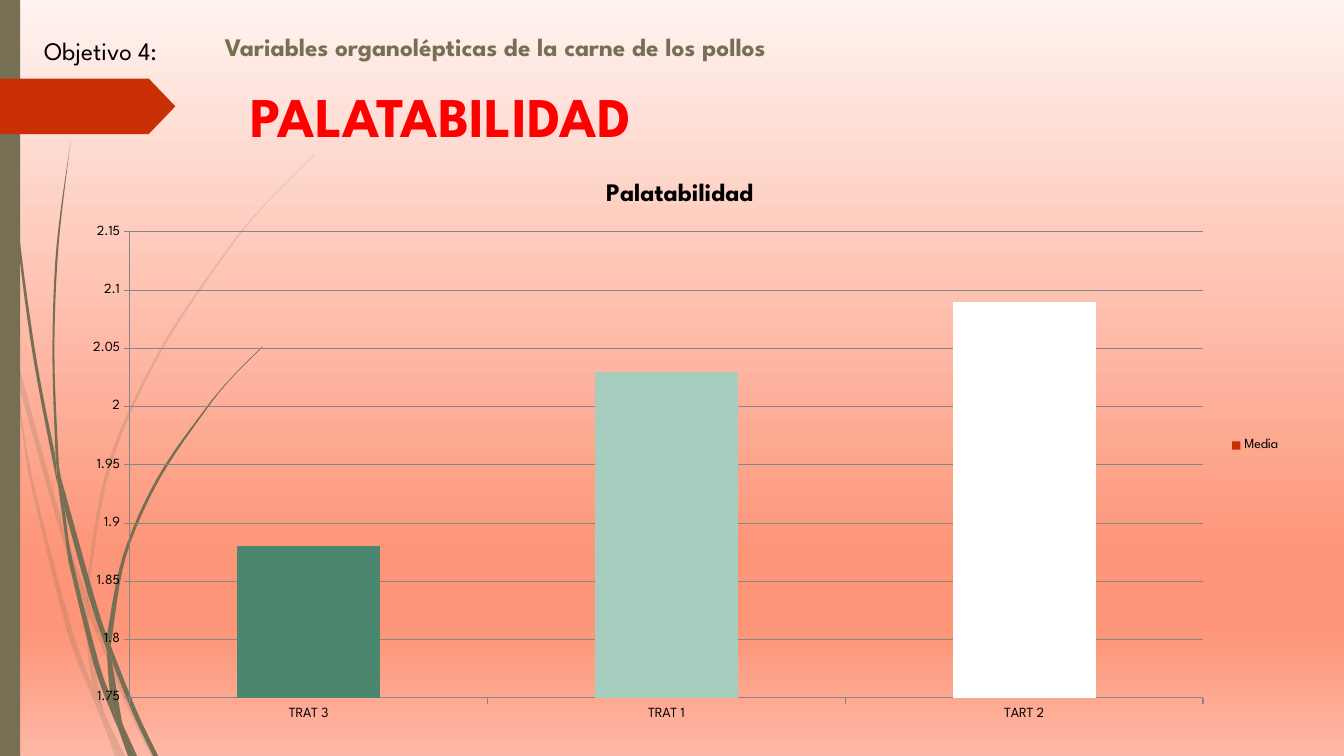
from dataclasses import dataclass
from typing import Any, NamedTuple

from lxml.etree import SubElement
from pptx import Presentation
from pptx.chart.data import CategoryChartData
from pptx.dml.color import RGBColor
from pptx.enum.chart import XL_CHART_TYPE, XL_LEGEND_POSITION, XL_TICK_MARK
from pptx.enum.shapes import MSO_SHAPE
from pptx.enum.text import MSO_ANCHOR
from pptx.oxml.ns import qn
from pptx.util import Cm, Pt

Point = tuple[float, float]
GRID = Cm(2.54)
CURVE_STEPS = 6


@dataclass(frozen=True)
class Theme:
    font: str = "League Spartan"
    olive: str = "766F54"
    rust: str = "CA2F03"
    red: str = "FF0000"
    black: str = "000000"
    rule: str = "868686"
    bars: tuple[str, ...] = ("4B866E", "A6CDBD", "FFFFFF")
    sky: tuple[tuple[int, str], ...] = (
        (0, "FFF3F0"), (74, "FD9578"), (83, "FD9578"), (100, "FEB8A5"))
    faded: int = 20
    heading: int = 40
    body: int = 18
    chart: int = 10


class Blade(NamedTuple):
    outward: list[Point]
    back: list[Point]


class Caption(NamedTuple):
    wording: str
    left: float
    top: float
    width: float
    height: float
    size: int
    color: str
    bold: bool


THEME = Theme()

FADED_BLADES = [
    Blade([(.11, 3.5), (.09, 3.22), (0, 2.82)], [(0, 2.99), (.1, 3.44)]),
    Blade([(.14, 3.45), (.62, 5.2), (.85, 5.86)],
          [(.84, 5.99), (.58, 5.22), (.17, 3.76)]),
    Blade([(.88, 5.96), (.92, 6.07), (1.27, 6.92), (1.55, 7.5)],
          [(1.5, 7.5), (1.23, 6.94), (.88, 6.1)]),
    Blade([(1.05, 7.11), (1.24, 7.5)], [(1.19, 7.5)]),
    Blade([(.11, 3.5), (.17, 3.76), (.31, 4.69), (.7, 6.19), (.93, 6.83)],
          [(.99, 7.07), (1.01, 7.14), (.92, 6.93), (.65, 6.21), (.28, 4.7)]),
    Blade([(.84, 5.99), (.87, 6.46), (.93, 6.83), (1.05, 7.11)],
          [(1.03, 7.06), (.91, 6.46), (.88, 6.1)]),
    Blade([(.88, 5.96), (.88, 5.84), (1.1, 4.62), (1.6, 3.49), (2.29, 2.45),
           (2.68, 1.98), (3.12, 1.54)],
          [(3.12, 1.53), (2.68, 1.97), (2.28, 2.44), (1.58, 3.48), (1.07, 4.61),
           (.85, 5.84)]),
    Blade([(1.01, 7.14), (1.14, 7.5)], [(1.19, 7.5)]),
    Blade([(.85, 5.86), (.88, 5.96), (.88, 6.1)], [(.84, 5.99)]),
    Blade([(.93, 6.83), (1.05, 7.11), (1.19, 7.5)], [(1.01, 7.14)]),
]

SOLID_BLADES = [
    Blade([(.03, 0), (.04, .48), (.07, 1.1), (.17, 2.33), (.33, 3.55), (.57, 4.81)],
          [(.55, 4.53), (.36, 3.55), (.19, 2.32), (.08, 1.09), (.04, 0)]),
    Blade([(.6, 4.72), (.93, 5.9), (1.06, 6.31)],
          [(1.06, 6.45), (.88, 5.92), (.64, 5.05)]),
    Blade([(1.1, 6.41), (1.36, 7.06), (1.57, 7.5)],
          [(1.52, 7.5), (1.32, 7.08), (1.11, 6.56)]),
    Blade([(.57, 4.77), (.64, 5.05), (.72, 5.56), (.98, 6.57), (1.1, 6.91)],
          [(1.17, 7.22), (1.11, 7.08), (.93, 6.59), (.68, 5.57)]),
    Blade([(.6, 4.72), (.58, 4.53), (.54, 3.49), (.58, 2.45), (.7, 1.41)],
          [(.7, 1.41), (.56, 2.45), (.52, 3.49), (.55, 4.49)]),
    Blade([(1.22, 7.19), (1.36, 7.5)], [(1.33, 7.5)]),
    Blade([(.55, 4.49), (.6, 4.72), (.64, 5.05)], [(.57, 4.77)]),
    Blade([(1.1, 6.41), (1.11, 6.33), (1.25, 5.52), (1.58, 4.76), (2.05, 4.06),
           (2.31, 3.74), (2.61, 3.44)],
          [(2.6, 3.44), (2.31, 3.73), (2.04, 4.05), (1.56, 4.74), (1.22, 5.51),
           (1.06, 6.31)]),
    Blade([(1.17, 7.22), (1.31, 7.5)], [(1.27, 7.5)]),
    Blade([(1.06, 6.45), (1.1, 6.91), (1.22, 7.19)], [(1.21, 7.16), (1.11, 6.56)]),
    Blade([(1.06, 6.31), (1.1, 6.41), (1.11, 6.56)], [(1.06, 6.45)]),
    Blade([(1.1, 6.91), (1.22, 7.19), (1.33, 7.5)], [(1.3, 7.5), (1.17, 7.22)]),
]

CAPTIONS = [
    Caption("Variables organolépticas de la carne de los pollos",
            5.41, .58, 27.2, 1.19, THEME.body, THEME.olive, True),
    Caption("Objetivo 4:", .86, .76, 6.38, 1.02, THEME.body, THEME.black, False),
    Caption("PALATABILIDAD", 6.07, 1.78, 25.37, 2.24, THEME.heading, THEME.red, True),
]


def apply(target: Any, values: dict[str, Any]) -> None:
    for name, value in values.items():
        setattr(target, name, value)


def style_font(font: Any, size: int, color: str, bold: bool) -> None:
    apply(font, {"name": THEME.font, "size": Pt(size), "bold": bold})
    font.color.rgb = RGBColor.from_string(color)


def paint(shape: Any, color: str) -> None:
    shape.shadow.inherit = False
    shape.fill.solid()
    shape.fill.fore_color.rgb = RGBColor.from_string(color)
    shape.line.fill.background()


def smooth(edge: list[Point]) -> list[Point]:
    padded = [edge[0], *edge, edge[-1]]
    curve = [edge[0]]
    for before, start, end, after in zip(padded, padded[1:], padded[2:], padded[3:]):
        for step in range(1, CURVE_STEPS + 1):
            t = step / CURVE_STEPS
            x, y = (
                b + ((c - a) * t + (2 * a - 5 * b + 4 * c - d) * t ** 2
                     + (3 * b - a - 3 * c + d) * t ** 3) / 2
                for a, b, c, d in zip(before, start, end, after))
            curve.append((x, y))
    return curve


def draw_blade(slide: Any, blade: Blade, opacity: int) -> None:
    outline = [(x * GRID, y * GRID) for x, y in smooth(blade.outward) + smooth(blade.back)]
    builder = slide.shapes.build_freeform(*outline[0])
    builder.add_line_segments(outline[1:], close=True)
    leaf = builder.convert_to_shape()
    paint(leaf, THEME.olive)
    if opacity < 100:
        tint = leaf.element.spPr.find(f"{qn('a:solidFill')}/{qn('a:srgbClr')}")
        SubElement(tint, qn("a:alpha"), val=str(opacity * 1000))


def draw_background(slide: Any) -> None:
    fill = slide.background.fill
    fill.gradient()
    fill.gradient_angle = 270
    stops = slide.element.find(f".//{qn('a:gsLst')}")
    stops.clear()
    for position, color in THEME.sky:
        stop = SubElement(stops, qn("a:gs"), pos=str(position * 1000))
        SubElement(stop, qn("a:srgbClr"), val=color)


def draw_caption(slide: Any, caption: Caption) -> None:
    box = slide.shapes.add_textbox(
        Cm(caption.left), Cm(caption.top), Cm(caption.width), Cm(caption.height))
    apply(box.text_frame, {"word_wrap": True, "vertical_anchor": MSO_ANCHOR.MIDDLE})
    run = box.text_frame.paragraphs[0].add_run()
    run.text = caption.wording
    style_font(run.font, caption.size, caption.color, caption.bold)


def draw_palatability(slide: Any) -> None:
    data = CategoryChartData()
    data.categories = ["TRAT 3", "TRAT 1", "TART 2"]
    data.add_series("Media", [1.88, 2.03, 2.09])
    chart = slide.shapes.add_chart(
        XL_CHART_TYPE.COLUMN_CLUSTERED, Cm(1.73), Cm(4.01), Cm(30.81), Cm(14.43), data).chart
    style_font(chart.font, THEME.chart, THEME.black, False)
    apply(chart, {"has_legend": True, "has_title": True})
    apply(chart.legend, {"position": XL_LEGEND_POSITION.RIGHT, "include_in_layout": False})
    heading = chart.chart_title.text_frame
    heading.text = "Palatabilidad"
    style_font(heading.paragraphs[0].runs[0].font, THEME.body, THEME.black, True)
    scale = chart.value_axis
    apply(scale, {"minimum_scale": 1.75, "maximum_scale": 2.15, "major_unit": .05,
                  "has_major_gridlines": True})
    apply(scale.tick_labels, {"number_format": "General", "number_format_is_linked": False})
    for axis in (scale, chart.category_axis):
        axis.major_tick_mark = XL_TICK_MARK.OUTSIDE
    for ruled in (scale, chart.category_axis, scale.major_gridlines):
        apply(ruled.format.line, {"width": Pt(.75)})
        ruled.format.line.color.rgb = RGBColor.from_string(THEME.rule)
    apply(chart.plots[0], {"gap_width": 150, "vary_by_categories": False})
    media = chart.plots[0].series[0]
    fills = [media.format.fill]
    fills += [media.points[index].format.fill for index in range(len(THEME.bars))]
    for fill, color in zip(fills, (THEME.rust, *THEME.bars)):
        fill.solid()
        fill.fore_color.rgb = RGBColor.from_string(color)


def main() -> None:
    deck = Presentation()
    apply(deck, {"slide_width": Cm(33.87), "slide_height": Cm(19.05)})
    slide = deck.slides.add_slide(deck.slide_layouts[6])
    draw_background(slide)
    for blades, opacity in ((FADED_BLADES, THEME.faded), (SOLID_BLADES, 100)):
        for blade in blades:
            draw_blade(slide, blade, opacity)
    side_band = slide.shapes.add_shape(MSO_SHAPE.RECTANGLE, 0, 0, Cm(.51), Cm(19.05))
    paint(side_band, THEME.olive)
    arrow_tab = slide.shapes.add_shape(MSO_SHAPE.PENTAGON, 0, Cm(1.98), Cm(4.42), Cm(1.4))
    arrow_tab.adjustments[0] = .48
    paint(arrow_tab, THEME.rust)
    for caption in CAPTIONS:
        draw_caption(slide, caption)
    draw_palatability(slide)
    deck.save("out.pptx")


if __name__ == "__main__":
    main()
